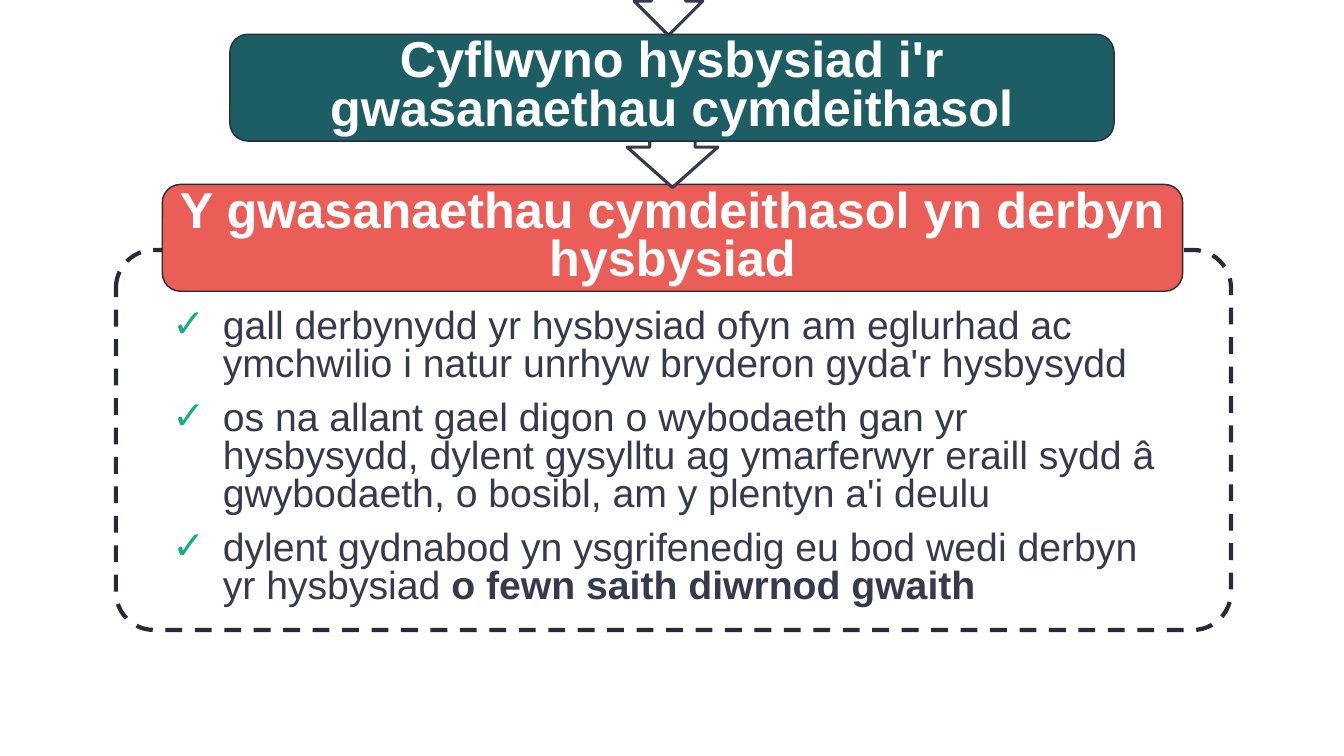
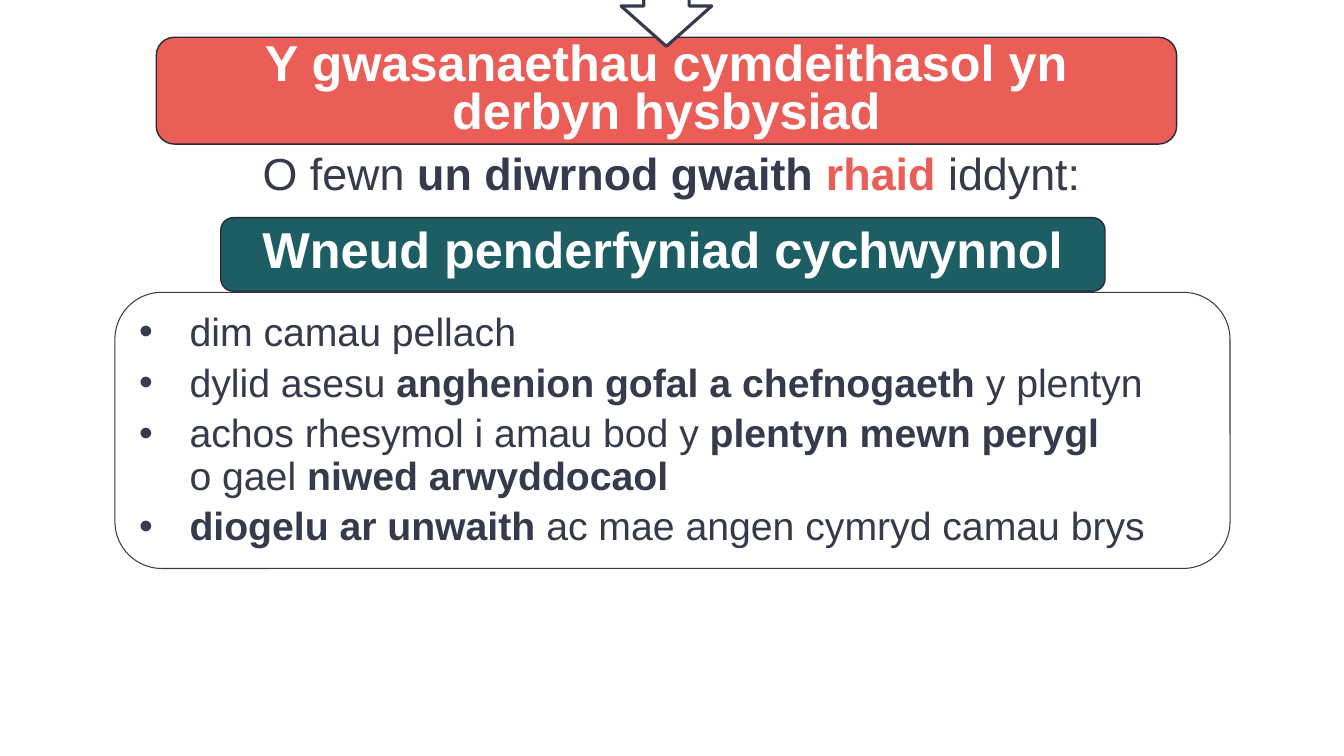
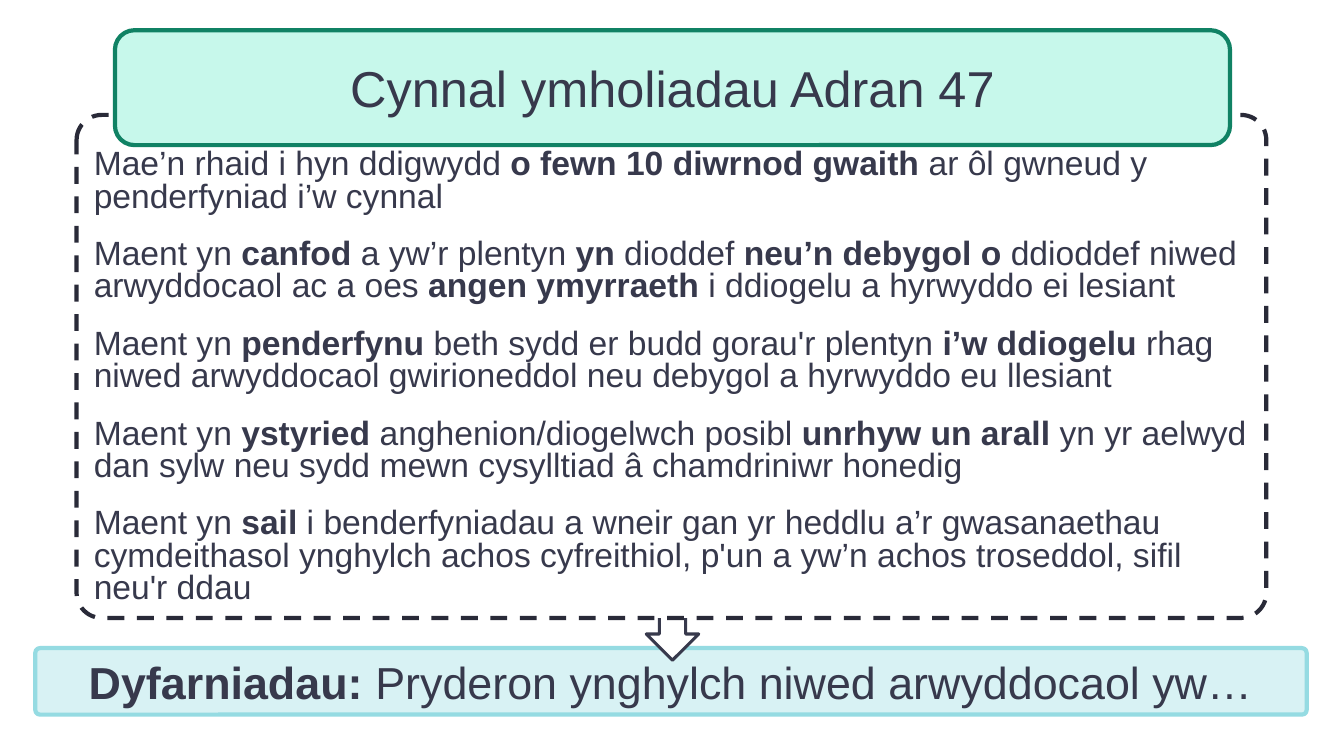
from lxml import etree
from pptx import Presentation
from pptx.dml import color
from pptx.enum import dml, shapes, text
from pptx.oxml import ns
from pptx import util as u

PX = 9144  # 100 px to the inch
FONT = "Arial"
INK, EDGE, WHITE = "37394C", "292A38", "FFFFFF"
CORAL, TEAL, GREEN = "EB5E57", "1C5E64", "16AD85"
MINT, MINT_EDGE, SKY, SKY_EDGE = "C7F8EB", "108264", "D8F2F4", "95DBE2"
ROUND = 0.17
CORNER_INSET = 0.29  # share of a corner radius that its text area loses

CENTRED = {"alignment": text.PP_ALIGN.CENTER, "space_before": u.Pt(0)}
LEFT = {"alignment": text.PP_ALIGN.LEFT, "space_before": u.Pt(0)}
BANNER = CENTRED | {"line_spacing": 0.8}
CHECKLIST = LEFT | {"line_spacing": 0.8, "space_after": u.Pt(12)}
OPTIONS = LEFT | {"line_spacing": 0.9, "space_after": u.Pt(6)}
DUTIES = LEFT | {"line_spacing": 0.8, "space_after": u.Pt(18)}

MIDDLE, TOP, BOTTOM = (text.MSO_ANCHOR.MIDDLE, text.MSO_ANCHOR.TOP,
                       text.MSO_ANCHOR.BOTTOM)


def rgb(value):
    return color.RGBColor.from_string(value)


def apply(target, values):
    for name, value in values.items():
        setattr(target, name, value)


def place(shape, area):
    apply(shape, dict(zip(("left", "top", "width", "height"),
                          (n * PX for n in area))))


def inner(area, corner=ROUND):
    """Text area of a rounded rectangle."""
    left, top, width, height = area
    inset = round(CORNER_INSET * corner * min(width, height))
    return left + inset, top + inset, width - 2 * inset, height - 2 * inset


def set_bullet(para, mark, tint):
    """Give the paragraph a hanging bullet, or none at all."""
    props = para._p.get_or_add_pPr()
    indent = 50 * PX if mark else 0
    props.set("marL", str(indent))
    props.set("indent", str(-indent))
    if not mark:
        etree.SubElement(props, ns.qn("a:buNone"))
        return
    holder = etree.SubElement(props, ns.qn("a:buClr"))
    etree.SubElement(holder, ns.qn("a:srgbClr"), val=tint)
    etree.SubElement(props, ns.qn("a:buChar"), char=mark)


def write_spans(para, content, size, ink, bold, accent):
    """Write one paragraph; *stars* mark bold and a newline breaks the line."""
    for index, part in enumerate(content.split("*")):
        for row, line in enumerate(part.split("\n")):
            if row:
                para.add_line_break()
            if not line:
                continue
            span = para.add_run()
            span.text = line
            apply(span.font, {"name": FONT, "size": u.Pt(size),
                              "bold": bold or index % 2 == 1})
            span.font.color.rgb = rgb(CORAL if line == accent else ink)


def write(shape, lines, size, layout, ink=INK, bold=False, anchor=MIDDLE,
          mark=None, tint=INK, accent=None):
    frame = shape.text_frame
    apply(frame, {"word_wrap": True, "vertical_anchor": anchor,
                  "auto_size": text.MSO_AUTO_SIZE.NONE})
    for index, content in enumerate(lines):
        para = frame.add_paragraph() if index else frame.paragraphs[0]
        apply(para, layout)
        set_bullet(para, mark, tint)
        write_spans(para, content, size, ink, bold, accent)


def add_block(page, kind, area, fill, line, weight, corner=None, dashed=False):
    block = page.shapes.add_shape(kind, 0, 0, 0, 0)
    place(block, area)
    block.shadow.inherit = False
    block.fill.solid()
    block.fill.fore_color.rgb = rgb(fill)
    block.line.color.rgb = rgb(line)
    block.line.width = u.Pt(weight)
    if corner is not None:
        block.adjustments[0] = corner
    if dashed:
        block.line.dash_style = dml.MSO_LINE.DASH
    return block


def add_panel(page, area, fill=WHITE, line=EDGE, weight=1, corner=ROUND,
              dashed=False):
    return add_block(page, shapes.MSO_SHAPE.ROUNDED_RECTANGLE, area, fill,
                     line, weight, corner, dashed)


def add_arrow(page, area):
    add_block(page, shapes.MSO_SHAPE.DOWN_ARROW, area, WHITE, INK, 2.25)


def add_step(page, area, label):
    write(add_panel(page, area, TEAL), [label], 36, BANNER, WHITE, True)


def fill_placeholder(holder, area, lines, size, layout, **style):
    """Place the holder above everything drawn so far and write in it."""
    holder.element.getparent().append(holder.element)
    place(holder, area)
    write(holder, lines, size, layout, **style)


def add_heading(page, area, label):
    """Coral band that carries the slide title."""
    add_panel(page, area, CORAL)
    fill_placeholder(page.shapes.title, inner(area), [label], 36, BANNER,
                     ink=WHITE, bold=True)


def build_receipt(page):
    add_panel(page, (115, 248, 1106, 377), weight=3, corner=0.1, dashed=True)
    add_heading(page, (161, 183, 1012, 106),
                "Y gwasanaethau cymdeithasol yn derbyn hysbysiad")
    add_arrow(page, (622, 106, 90, 80))
    add_step(page, (228, 34, 877, 106),
             "Cyflwyno hysbysiad i'r gwasanaethau cymdeithasol")
    add_arrow(page, (629, -46, 68, 81))
    fill_placeholder(page.placeholders[1], (161, 302, 1012, 322), [
        "gall derbynydd yr hysbysiad ofyn am eglurhad ac ymchwilio i natur "
        "unrhyw bryderon gyda'r hysbysydd",
        "os na allant gael digon o wybodaeth gan yr hysbysydd, dylent "
        "gysylltu ag ymarferwyr eraill sydd â gwybodaeth, o bosibl, am y "
        "plentyn a'i deulu",
        "dylent gydnabod yn ysgrifenedig eu bod wedi derbyn yr hysbysiad "
        "*o fewn saith diwrnod gwaith*",
    ], 28, CHECKLIST, anchor=TOP, mark="✓", tint=GREEN)


def build_decision(page):
    options = (114, 290, 1106, 274)
    add_panel(page, options, line=INK, weight=0.75)
    fill_placeholder(page.placeholders[1], inner(options), [
        "dim camau pellach",
        "dylid asesu *anghenion gofal a chefnogaeth *y plentyn",
        "achos rhesymol i amau bod y *plentyn mewn perygl*\n"
        "o gael *niwed arwyddocaol*",
        "*diogelu ar unwaith *ac mae angen cymryd camau brys",
    ], 28, OPTIONS, anchor=BOTTOM, mark="•")
    page.placeholders[1].text_frame.paragraphs[-1].space_after = u.Pt(0)
    add_step(page, (219, 216, 877, 73), "Wneud penderfyniad cychwynnol")
    add_heading(page, (155, 37, 1012, 106),
                "Y gwasanaethau cymdeithasol yn\nderbyn hysbysiad")
    add_arrow(page, (616, -34, 90, 80))
    deadline = page.shapes.add_textbox(0, 0, 0, 0)
    place(deadline, (113, 146, 1106, 59))
    write(deadline, ["O fewn *un diwrnod gwaith **rhaid *iddynt:"], 32,
          CENTRED | {"line_spacing": 0.9}, anchor=TOP, accent="rhaid ")


def build_enquiries(page):
    verdict = add_panel(page, (35, 643, 1261, 66), SKY, SKY_EDGE, 3, 0.07)
    write(verdict,
          ["*Dyfarniadau:* Pryderon ynghylch niwed arwyddocaol yw…"],
          32, CENTRED)
    add_arrow(page, (641, 584, 52, 71))
    duties = (76, 114, 1180, 499)
    add_panel(page, duties, weight=3, corner=0.05, dashed=True)
    fill_placeholder(page.placeholders[1], inner(duties, 0.05), [
        "Mae’n rhaid i hyn ddigwydd *o fewn 10 diwrnod gwaith *ar ôl gwneud "
        "y penderfyniad i’w cynnal",
        "Maent yn *canfod* a yw’r plentyn *yn *dioddef* neu’n debygol o "
        "*ddioddef niwed arwyddocaol ac a oes *angen ymyrraeth* i ddiogelu "
        "a hyrwyddo ei lesiant",
        "Maent yn *penderfynu* beth sydd er budd gorau'r plentyn *i’w "
        "ddiogelu *rhag niwed arwyddocaol gwirioneddol neu debygol a "
        "hyrwyddo eu llesiant",
        "Maent yn *ystyried *anghenion/diogelwch posibl *unrhyw un arall "
        "*yn yr aelwyd dan sylw neu sydd mewn cysylltiad â chamdriniwr "
        "honedig",
        "Maent yn *sail *i benderfyniadau a wneir gan yr heddlu a’r "
        "gwasanaethau cymdeithasol ynghylch achos cyfreithiol, p'un a yw’n "
        "achos troseddol, sifil neu'r ddau",
    ], 24, DUTIES, anchor=BOTTOM)
    heading = (114, 30, 1106, 114)
    add_panel(page, heading, MINT, MINT_EDGE, 3)
    fill_placeholder(page.shapes.title, inner(heading),
                     ["Cynnal ymholiadau Adran 47"], 36, CENTRED)


def main():
    deck = Presentation()
    apply(deck, {"slide_width": 1333 * PX, "slide_height": 750 * PX})
    for build in (build_receipt, build_decision, build_enquiries):
        build(deck.slides.add_slide(deck.slide_layouts[1]))
    deck.save("out.pptx")


if __name__ == "__main__":
    main()
